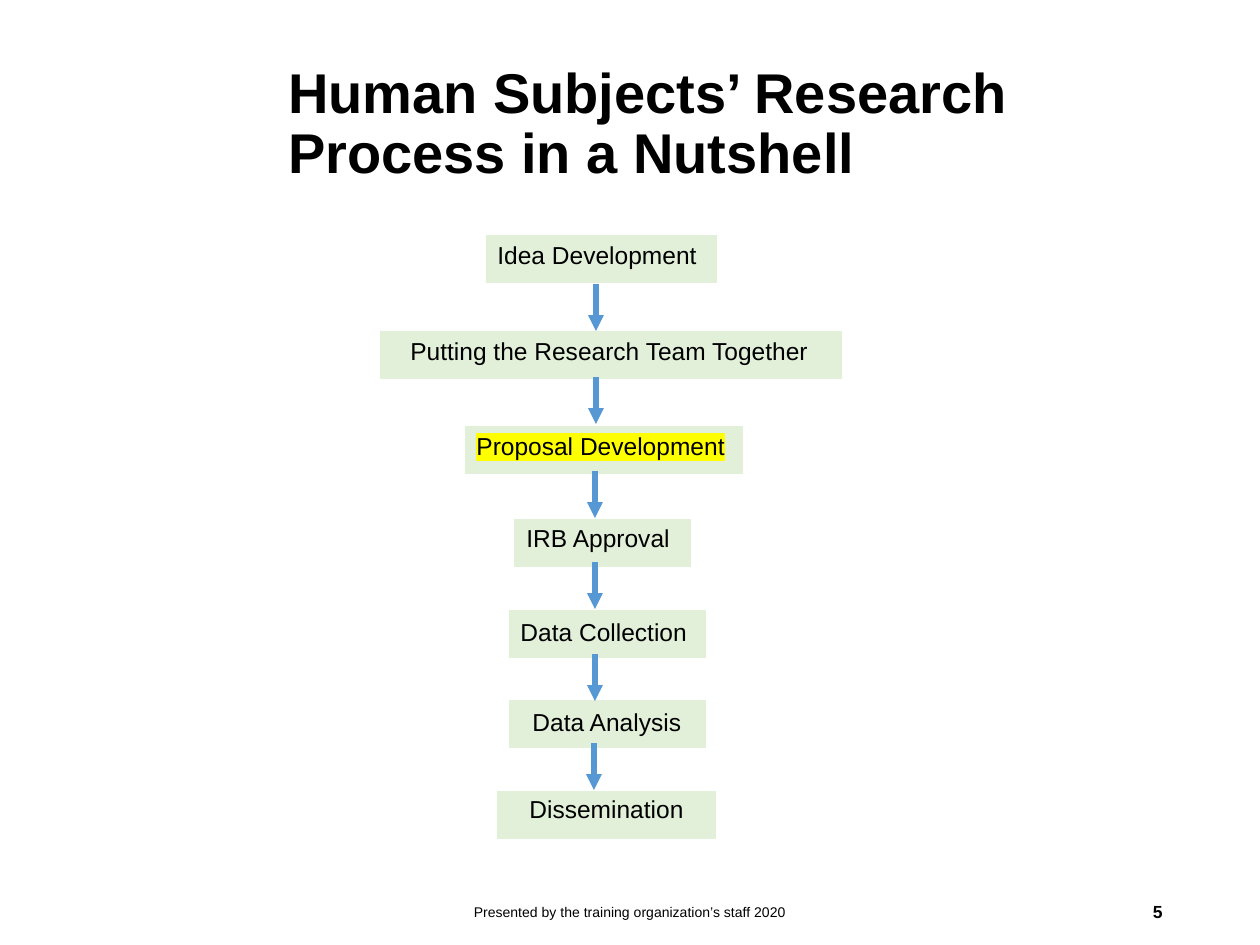
from lxml.etree import SubElement
from pptx import Presentation
from pptx.dml.color import RGBColor
from pptx.enum.shapes import MSO_CONNECTOR as Connector
from pptx.enum.text import MSO_ANCHOR as Anchor, MSO_AUTO_SIZE as AutoSize, PP_ALIGN as Align
from pptx.oxml.ns import qn
from pptx.util import Emu, Pt

EMU_PER_PX = 914400 / 126
COLORS = {
    "text": "000000",
    "band": "E2F0D9",
    "border": "FFFFFF",
    "arrow": "5698D3",
    "highlight": "FFFF00",
}
# label, band (left, top, width), label box (left, top, width)
STAGES = [
    ("Idea Development", (485, 234, 233), (485, 234, 233)),
    ("Putting the Research Team Together", (379, 330, 464), (398, 330, 501)),
    ("Proposal Development", (464, 425, 280), (464, 425, 286)),
    ("IRB Approval", (513, 518, 179), (514, 517, 233)),
    ("Data Collection", (508, 609, 199), (508, 611, 233)),
    ("Data Analysis", (508, 699, 199), (520, 701, 233)),
    ("Dissemination", (496, 790, 221), (517, 788, 233)),
]
CURRENT_STAGE = "Proposal Development"
ARROW_STARTS = [(596, 284), (596, 377), (595, 471), (595, 562), (595, 654), (594, 743)]
BAND_HEIGHT = ARROW_LENGTH = 47
LABEL_HEIGHT = 43


def px(*lengths):
    return [Emu(round(length * EMU_PER_PX)) for length in lengths]


def rgb(name):
    return RGBColor.from_string(COLORS[name])


def add_run(para, text, size, bold=False):
    span = para.add_run()
    span.text = text
    font = span.font
    font.name, font.size, font.bold = "Arial", Pt(size), bold
    font.color.rgb = rgb("text")
    return span


def highlight(span):
    mark = SubElement(span.font._element, qn("a:highlight"))
    SubElement(mark, qn("a:srgbClr"), val=COLORS["highlight"])
    # The schema wants the highlight straight after the text fill.
    span.font._element.find(qn("a:solidFill")).addnext(mark)


def add_title(page, text):
    title = page.shapes.title
    title.left, title.top, title.width, title.height = px(275, 34, 900, 183)
    frame = title.text_frame
    frame.auto_size = AutoSize.NONE
    frame.word_wrap = True
    frame.vertical_anchor = Anchor.MIDDLE
    frame.margin_left, frame.margin_top, frame.margin_right, frame.margin_bottom = px(13, 13, 13, 13)
    para = frame.paragraphs[0]
    para.alignment = Align.LEFT
    para.line_spacing = 0.9
    add_run(para, text, 32, bold=True)


def add_text(page, text, place, size, align=Align.LEFT, anchor=Anchor.TOP, bold=False):
    frame = page.shapes.add_textbox(*px(*place)).text_frame
    frame.word_wrap = True
    frame.vertical_anchor = anchor
    para = frame.paragraphs[0]
    para.alignment = align
    return add_run(para, text, size, bold)


def add_band(page, left, top, width):
    """Add the one-cell table that backs a stage label."""
    table = page.shapes.add_table(1, 1, *px(left, top, width, BAND_HEIGHT)).table
    cell = table.cell(0, 0)
    props = cell._tc.get_or_add_tcPr()
    for side, points in (("L", 1), ("R", 1), ("T", 1), ("B", 3)):
        border = SubElement(props, qn(f"a:ln{side}"), w=str(Pt(points)))
        fill = SubElement(border, qn("a:solidFill"))
        SubElement(fill, qn("a:srgbClr"), val=COLORS["border"])
    cell.fill.solid()
    cell.fill.fore_color.rgb = rgb("band")


def add_arrow(page, x, top):
    arrow = page.shapes.add_connector(Connector.STRAIGHT, *px(x, top, x, top + ARROW_LENGTH))
    arrow.line.color.rgb = rgb("arrow")
    arrow.line.width = Pt(3)
    SubElement(arrow.line._get_or_add_ln(), qn("a:tailEnd"), type="triangle")
    SubElement(arrow._element.spPr, qn("a:effectLst"))


def main():
    deck = Presentation()
    deck.slide_width, deck.slide_height = px(1260, 945)
    page = deck.slides.add_slide(deck.slide_layouts[5])

    for _, band, _ in STAGES:
        add_band(page, *band)
    add_title(page, "Human Subjects’ Research Process in a Nutshell")
    for label, _, place in STAGES:
        span = add_text(page, label, (*place, LABEL_HEIGHT), 14)
        if label == CURRENT_STAGE:
            highlight(span)
    for start in ARROW_STARTS:
        add_arrow(page, *start)

    add_text(page, "Presented by the training organization’s staff 2020",
             (417, 887, 426, 50), 8, Align.CENTER, Anchor.MIDDLE)
    add_text(page, "5", (1060, 887, 115, 50), 10, Align.RIGHT, Anchor.MIDDLE, bold=True)
    deck.save("out.pptx")


if __name__ == "__main__":
    main()
